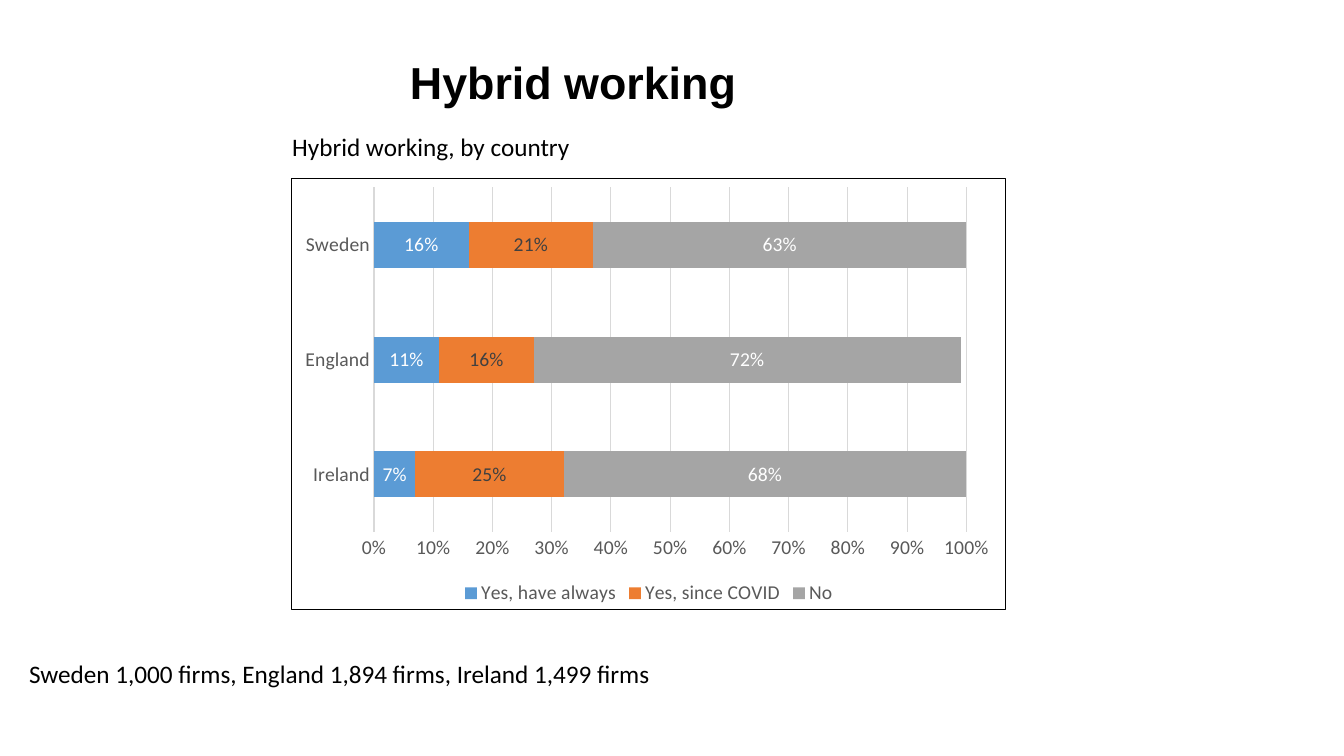
import lxml.etree
import pptx
import pptx.chart.data
import pptx.dml.color
import pptx.enum.chart
import pptx.enum.text
import pptx.oxml
import pptx.oxml.ns
import pptx.util
from pptx.util import Inches

BLACK, AXIS_TEXT, GRID = "000000", "595959", "D9D9D9"


def color(hex_value):
    return pptx.dml.color.RGBColor.from_string(hex_value)


def write(shape, text, size=18, font="Calibri", bold=False, align="LEFT", wrap=True):
    frame = shape.text_frame
    frame.word_wrap = wrap
    frame.auto_size = pptx.enum.text.MSO_AUTO_SIZE.NONE
    frame.vertical_anchor = pptx.enum.text.MSO_ANCHOR.MIDDLE
    para = frame.paragraphs[0]
    para.alignment = getattr(pptx.enum.text.PP_ALIGN, align)
    span = para.add_run()
    span.text = text
    span.font.size = pptx.util.Pt(size)
    span.font.name = font
    span.font.bold = bold
    span.font.color.rgb = color(BLACK)


deck = pptx.Presentation()
deck.slide_width, deck.slide_height = Inches(13.33), Inches(7.5)
page = deck.slides.add_slide(deck.slide_layouts[5])

title = page.shapes.title
title.left, title.top = Inches(0.7), Inches(0.49)
title.width, title.height = Inches(9.97), Inches(0.64)
write(title, "Hybrid working", size=32, font="Arial", bold=True, align="CENTER")

# Stacked bar chart: name, values, bar colour, label colour
answers = [
    ("Yes, have always", (0.07, 0.11, 0.16), "5B9BD5", "FFFFFF"),
    ("Yes, since COVID", (0.25, 0.16, 0.21), "ED7D31", "404040"),
    ("No", (0.68, 0.72, 0.63), "A5A5A5", "FFFFFF"),
]
data = pptx.chart.data.CategoryChartData(number_format="0%")
data.categories = ["Ireland", "England", "Sweden"]
for name, values, _, _ in answers:
    data.add_series(name, values)

chart = page.shapes.add_chart(
    pptx.enum.chart.XL_CHART_TYPE.BAR_STACKED,
    Inches(2.89), Inches(1.77), Inches(7.09), Inches(4.28), data,
).chart
chart.has_title = False
chart.font.size = pptx.util.Pt(14)
chart.font.name = "Calibri"
chart.font.color.rgb = color(AXIS_TEXT)

chart.has_legend = True
chart.legend.position = pptx.enum.chart.XL_LEGEND_POSITION.BOTTOM
chart.legend.include_in_layout = False

countries, shares = chart.category_axis, chart.value_axis
for axis in (countries, shares):
    axis.major_tick_mark = pptx.enum.chart.XL_TICK_MARK.NONE
    axis.minor_tick_mark = pptx.enum.chart.XL_TICK_MARK.NONE
countries.has_major_gridlines = False
shares.has_major_gridlines = True
for line in (countries.format.line, shares.major_gridlines.format.line):
    line.color.rgb = color(GRID)
    line.width = pptx.util.Pt(0.75)
shares.format.line.fill.background()
shares.minimum_scale, shares.maximum_scale, shares.major_unit = 0, 1, 0.1
shares.tick_labels.number_format = "0%"
shares.tick_labels.number_format_is_linked = False

plot = chart.plots[0]
plot.gap_width, plot.overlap, plot.vary_by_categories = 150, 100, False
for series, (_, _, bar_color, label_color) in zip(plot.series, answers):
    series.format.fill.solid()
    series.format.fill.fore_color.rgb = color(bar_color)
    labels = series.data_labels
    labels.show_value = True
    labels.number_format = "0%"
    labels.number_format_is_linked = False
    labels.font.size = pptx.util.Pt(14)
    labels.font.name = "Calibri"
    labels.font.color.rgb = color(label_color)

# Chart border and fixed plot area
namespaces = pptx.oxml.ns.nsdecls("c", "a")
chart_element = chart.element.find(pptx.oxml.ns.qn("c:chart"))
chart_element.addnext(pptx.oxml.parse_xml(
    f'<c:spPr {namespaces}><a:solidFill><a:srgbClr val="FFFFFF"/></a:solidFill>'
    f'<a:ln w="9525"><a:solidFill><a:srgbClr val="{BLACK}"/></a:solidFill></a:ln></c:spPr>'
))
plot_area = chart_element.find(pptx.oxml.ns.qn("c:plotArea"))
for old_layout in plot_area.findall(pptx.oxml.ns.qn("c:layout")):
    plot_area.remove(old_layout)
layout = pptx.oxml.parse_xml(f"<c:layout {namespaces}><c:manualLayout/></c:layout>")
for tag, value in [("layoutTarget", "inner"), ("xMode", "edge"), ("yMode", "edge"),
                   ("x", "0.115"), ("y", "0.02"), ("w", "0.83"), ("h", "0.8")]:
    lxml.etree.SubElement(layout[0], pptx.oxml.ns.qn(f"c:{tag}")).set("val", value)
plot_area.insert(0, layout)

subtitle = page.shapes.add_textbox(Inches(2.8), Inches(1.25), Inches(5.96), Inches(0.4))
write(subtitle, "Hybrid working, by country")

sample = page.shapes.add_textbox(Inches(0.19), Inches(6.48), Inches(6.5), Inches(0.4))
write(sample, "Sweden 1,000 firms, England 1,894 firms, Ireland 1,499 firms", wrap=False)

deck.save("out.pptx")
